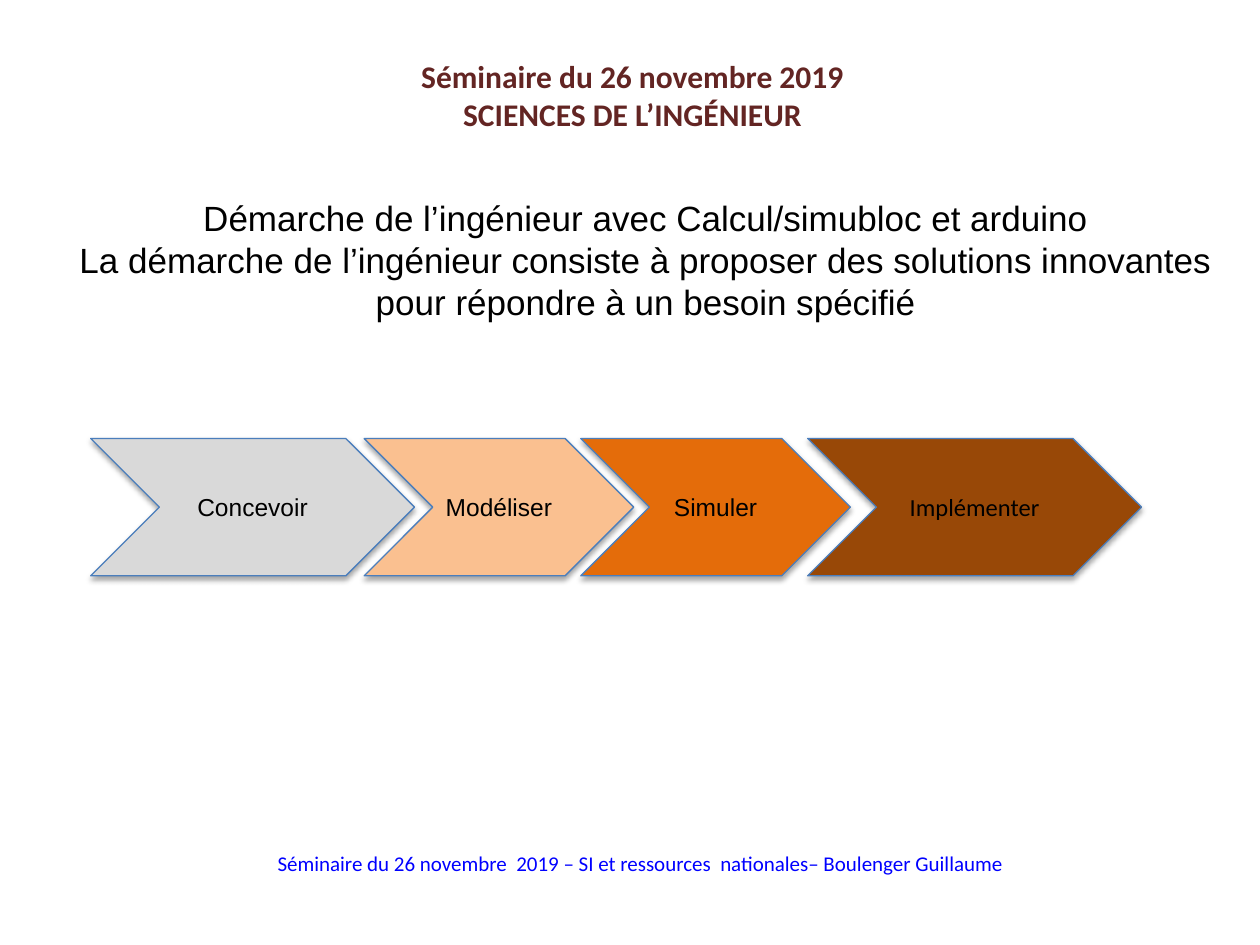
import dataclasses

import lxml.etree
import pptx
import pptx.dml.color
import pptx.enum.shapes
import pptx.enum.text
import pptx.oxml.ns
import pptx.util

CELL = pptx.util.Inches(0.1)  # the slide is a grid of 100 columns by 75 rows
COLS, ROWS = 100, 75
TOP, HIGH = 34.8, 10.9  # row and height of the chevron band
COLORS = {
    "title": "632523",
    "foot": "0000FF",
    "text": "000000",
    "edge": "4B7EBC",
    "grey": "D9D9D9",
    "peach": "FAC090",
    "orange": "E46C0A",
    "brown": "984807",
}


@dataclasses.dataclass
class Style:
    size: int
    font: str
    color: str = "text"
    bold: bool = False


@dataclasses.dataclass
class Step:
    label: str
    col: float
    width: float
    fill: str
    font: str = "Arial"


STEPS = [
    Step("Concevoir", 7.2, 25.7, "grey"),
    Step("Modéliser", 28.9, 21.4, "peach"),
    Step("Simuler", 46.1, 21.4, "orange"),
    Step("Implémenter", 64.1, 26.5, "brown", "Calibri"),
]


def grid(*cells: float) -> list[int]:
    return [round(cell * CELL) for cell in cells]


def tint(name: str) -> pptx.dml.color.RGBColor:
    return pptx.dml.color.RGBColor.from_string(COLORS[name])


def write(shape, lines: list[str], style: Style, anchor: str = "TOP") -> None:
    frame = shape.text_frame
    frame.word_wrap = True
    frame.auto_size = pptx.enum.text.MSO_AUTO_SIZE.NONE
    frame.vertical_anchor = pptx.enum.text.MSO_ANCHOR[anchor]
    frame.text = "\n".join(lines)
    for para in frame.paragraphs:
        para.alignment = pptx.enum.text.PP_ALIGN.CENTER
        para.font.size = pptx.util.Pt(style.size)
        para.font.name = style.font
        para.font.bold = style.bold
        para.font.color.rgb = tint(style.color)


def shade(shape) -> None:
    """Give the shape a soft shadow straight below it."""
    shape.shadow.inherit = False
    tag = pptx.oxml.ns.qn
    effects = shape.element.spPr.find(tag("a:effectLst"))
    outer = lxml.etree.SubElement(
        effects, tag("a:outerShdw"), blurRad="40000", dist="23000",
        dir="5400000", rotWithShape="0")
    color = lxml.etree.SubElement(outer, tag("a:srgbClr"), val=COLORS["text"])
    lxml.etree.SubElement(color, tag("a:alpha"), val="35000")


def draw(slide, step: Step) -> None:
    shape = slide.shapes.add_shape(
        pptx.enum.shapes.MSO_SHAPE.CHEVRON,
        *grid(step.col, TOP, step.width, HIGH))
    shape.fill.solid()
    shape.fill.fore_color.rgb = tint(step.fill)
    shape.line.color.rgb = tint("edge")
    shape.line.width = pptx.util.Pt(0.75)
    shade(shape)
    write(shape, [step.label], Style(14, step.font), "MIDDLE")


def main() -> None:
    deck = pptx.Presentation()
    deck.slide_width, deck.slide_height = grid(COLS, ROWS)
    slide = deck.slides.add_slide(deck.slide_layouts[5])

    title = slide.shapes.title
    title.left, title.top, title.width, title.height = grid(9.8, 4, 80.8, 7)
    write(title, ["Séminaire du 26 novembre 2019", "SCIENCES DE L’INGÉNIEUR"],
          Style(18, "Calibri", "title", True))

    foot = slide.shapes.add_textbox(*grid(3.5, 67, 94.7, 3))
    write(foot, ["Séminaire du 26 novembre  2019 – SI et ressources  nationales"
                 "– Boulenger Guillaume"], Style(12, "Calibri", "foot"))

    intro = slide.shapes.add_textbox(*grid(5.3, 15.1, 91.9, 11.1))
    write(intro, ["Démarche de l’ingénieur avec Calcul/simubloc et arduino",
                  "La démarche de l’ingénieur consiste à proposer des solutions "
                  "innovantes pour répondre à un besoin spécifié"],
          Style(20, "Arial"))

    for step in STEPS:
        draw(slide, step)
    deck.save("out.pptx")


if __name__ == "__main__":
    main()
